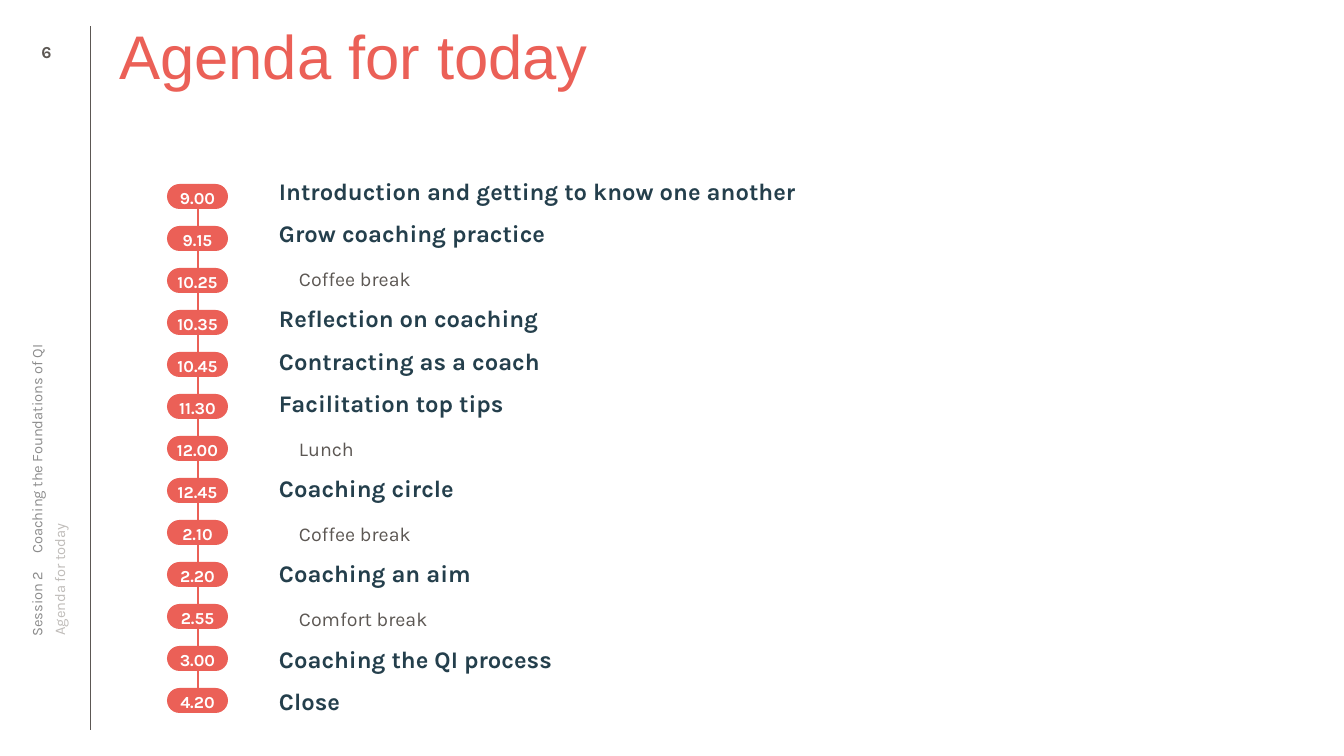
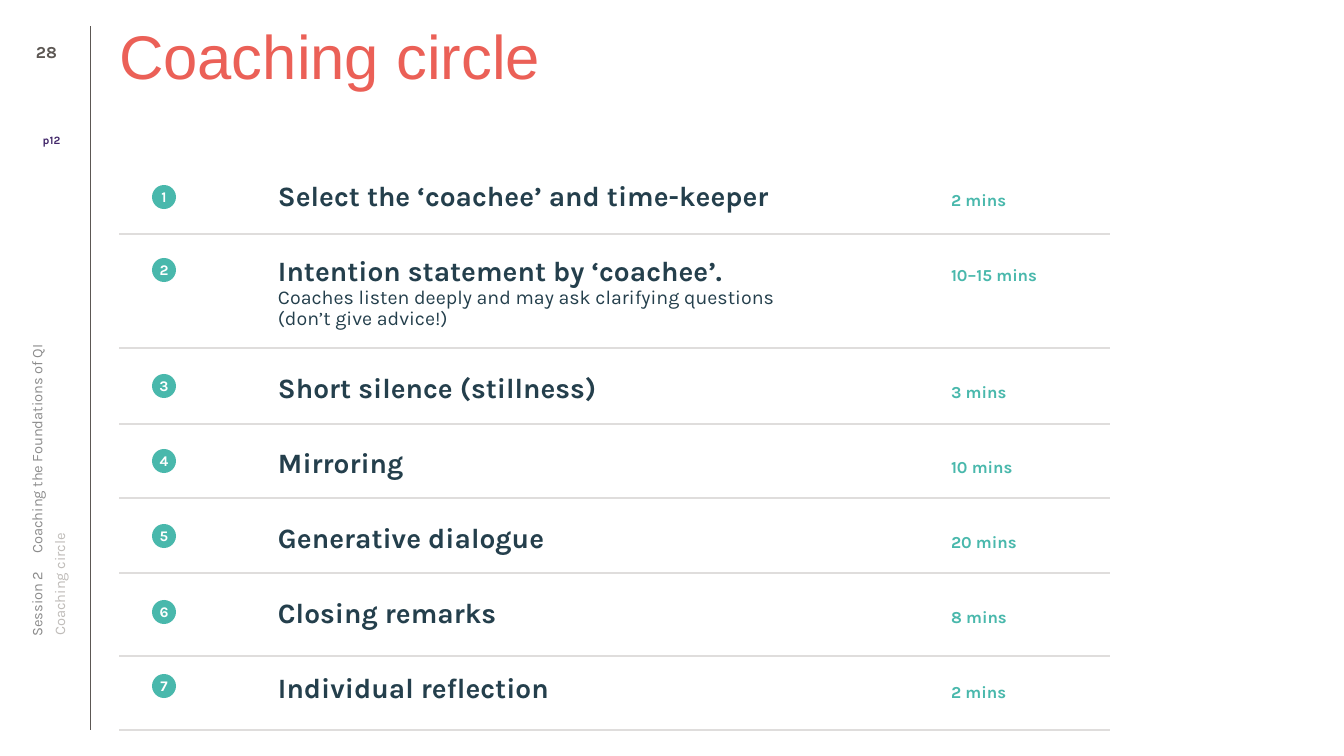
from dataclasses import dataclass

from lxml import etree
from pptx import Presentation
from pptx.dml.color import RGBColor
from pptx.enum.shapes import MSO_CONNECTOR, MSO_SHAPE
from pptx.enum.text import MSO_ANCHOR, MSO_AUTO_SIZE, PP_ALIGN
from pptx.oxml.ns import qn
from pptx.util import Emu, Pt

STRAIGHT = MSO_CONNECTOR.STRAIGHT
PILL, CIRCLE = MSO_SHAPE.ROUNDED_RECTANGLE, MSO_SHAPE.OVAL
TOP, MIDDLE = MSO_ANCHOR.TOP, MSO_ANCHOR.MIDDLE
LEFT, CENTER = PP_ALIGN.LEFT, PP_ALIGN.CENTER
NO_AUTOFIT = MSO_AUTO_SIZE.NONE

WIDTH, HEIGHT = 1344, 756
EMU_PER_PX = 12192000 / WIDTH


def px(length):
    return Emu(round(length * EMU_PER_PX))


@dataclass(frozen=True)
class TextStyle:
    size: float
    color: str
    bold: bool = False
    font: str = "Karla"


@dataclass(frozen=True)
class Theme:
    coral: str = "EB6057"
    teal: str = "49B8AC"
    margin_line: str = "5C5753"
    divider: str = "DFDDDC"
    title: TextStyle = TextStyle(44, "EB6057", font="Arial")
    page_number: TextStyle = TextStyle(12, "5C5753", True)
    page_reference: TextStyle = TextStyle(8, "412669", True)
    session: TextStyle = TextStyle(10.5, "8C8C8C")
    section: TextStyle = TextStyle(10.5, "BFBCB9")
    pill: TextStyle = TextStyle(12, "FFFFFF", True)
    step_number: TextStyle = TextStyle(10.5, "FFFFFF", True)
    agenda_item: TextStyle = TextStyle(17, "243F4C", True)
    agenda_break: TextStyle = TextStyle(14, "5C5753")
    step: TextStyle = TextStyle(20, "243F4C", True)
    step_detail: TextStyle = TextStyle(14, "243F4C")
    duration: TextStyle = TextStyle(12, "49B8AC", True)


@dataclass(frozen=True)
class ListItem:
    text: str
    style: TextStyle
    before: int = 0
    after: int = 0
    indent: int = 0


class Deck:
    """Holds the theme, the presentation and the current slide."""

    def __init__(self, theme):
        self.theme = theme
        self.presentation = Presentation()
        self.presentation.slide_width = px(WIDTH)
        self.presentation.slide_height = px(HEIGHT)
        self.slide = None

    def new_slide(self, title, number):
        layout = self.presentation.slide_layouts[1]
        self.slide = self.presentation.slides.add_slide(layout)
        theme = self.theme
        # Margin line and title
        self.line((90, 730), (90, 26), theme.margin_line, 0.25)
        heading = self.slide.shapes.title
        self.place(heading, (119, 26, 1199, 126))
        frame = self.frame(heading, TOP)
        self.add_text(frame.paragraphs[0], title, theme.title, spacing=0.9)
        # Page number and rotated labels in the margin
        self.text_box((26, 26, 41, 51), str(number), theme.page_number, CENTER)
        self.text_box((-198, 392, 469, 20),
                      "Session 2\tCoaching the Foundations of QI",
                      theme.session, rotation=270, tab=83)
        self.text_box((-174, 394, 468, 15), title, theme.section, anchor=TOP,
                      rotation=270, spacing=0.9)

    def place(self, shape, box):
        shape.left, shape.top, shape.width, shape.height = map(px, box)

    def frame(self, shape, anchor):
        frame = shape.text_frame
        frame.word_wrap = True
        frame.auto_size = NO_AUTOFIT
        frame.vertical_anchor = anchor
        frame.margin_left = frame.margin_right = 0
        frame.margin_top = frame.margin_bottom = 0
        return frame

    def add_text(self, paragraph, text, style, align=LEFT, spacing=1.0):
        paragraph.alignment = align
        paragraph.line_spacing = spacing
        run = paragraph.add_run()
        run.text = text
        font = run.font
        font.name, font.size, font.bold = style.font, Pt(style.size), style.bold
        font.color.rgb = RGBColor.from_string(style.color)

    def text_box(self, box, text, style, align=LEFT, anchor=MIDDLE, rotation=0,
                 spacing=1.0, tab=None):
        shape = self.slide.shapes.add_textbox(*map(px, box))
        shape.rotation = rotation
        paragraph = self.frame(shape, anchor).paragraphs[0]
        if tab:
            properties = paragraph._p.get_or_add_pPr()
            stops = etree.SubElement(properties, qn("a:tabLst"))
            etree.SubElement(stops, qn("a:tab"), pos=str(px(tab)), algn="l")
        self.add_text(paragraph, text, style, align, spacing)

    def line(self, start, end, color, width):
        connector = self.slide.shapes.add_connector(
            STRAIGHT, *map(px, start + end))
        connector.line.color.rgb = RGBColor.from_string(color)
        connector.line.width = Pt(width)
        etree.SubElement(connector._element.spPr, qn("a:effectLst"))

    def badge(self, kind, box, text, color, style, anchor):
        shape = self.slide.shapes.add_shape(kind, *map(px, box))
        if kind == PILL:
            shape.adjustments[0] = 0.5
        shape.shadow.inherit = False
        shape.fill.solid()
        shape.fill.fore_color.rgb = RGBColor.from_string(color)
        shape.line.fill.background()
        frame = self.frame(shape, anchor)
        self.add_text(frame.paragraphs[0], text, style, CENTER)

    def body_list(self, box, items, spacing):
        body = self.slide.placeholders[1]
        self.place(body, box)
        frame = self.frame(body, TOP)
        for index, item in enumerate(items):
            paragraph = frame.add_paragraph() if index else frame.paragraphs[0]
            properties = paragraph._p.get_or_add_pPr()
            properties.set("marL", str(px(item.indent)))
            properties.set("indent", "0")
            etree.SubElement(properties, qn("a:buNone"))
            paragraph.space_before = Pt(item.before if index else 0)
            paragraph.space_after = Pt(item.after)
            self.add_text(paragraph, item.text, item.style, spacing=spacing)


def agenda_slide(deck):
    theme = deck.theme
    deck.new_slide("Agenda for today", 6)
    # Time, entry, whether it is a break
    agenda = [
        ("9.00", "Introduction and getting to know one another", False),
        ("9.15", "Grow coaching practice", False),
        ("10.25", "Coffee break", True),
        ("10.35", "Reflection on coaching", False),
        ("10.45", "Contracting as a coach", False),
        ("11.30", "Facilitation top tips", False),
        ("12.00", "Lunch", True),
        ("12.45", "Coaching circle", False),
        ("2.10", "Coffee break", True),
        ("2.20", "Coaching an aim", False),
        ("2.55", "Comfort break", True),
        ("3.00", "Coaching the QI process", False),
        ("4.20", "Close", False),
    ]
    # Timeline
    top, pitch = 184, 42
    deck.line((198, top), (198, 712), theme.coral, 1.5)
    for row, (time, _, _) in enumerate(agenda):
        deck.badge(PILL, (167, top + row * pitch, 61, 25), time,
                   theme.coral, theme.pill, TOP)
    # Entries
    items = [
        ListItem(entry, theme.agenda_break, 15, 2, 21) if is_break
        else ListItem(entry, theme.agenda_item, 12, 2, 1)
        for _, entry, is_break in agenda
    ]
    deck.body_list((278, 182, 1039, 539), items, 0.8)


def coaching_circle_slide(deck):
    theme = deck.theme
    deck.new_slide("Coaching circle", 28)
    deck.text_box((26, 128, 51, 24), "p12", theme.page_reference, CENTER)
    # Step, detail, duration, then tops of circle, duration and divider
    steps = [
        ("Select the ‘coachee’ and time-keeper", "", "2 mins", 185, 190, 234),
        ("Intention statement by ‘coachee’.",
         "Coaches listen deeply and may ask clarifying questions "
         "(don’t give advice!)", "10–15 mins", 258, 265, 348),
        ("Short silence (stillness)", "", "3 mins", 374, 382, 424),
        ("Mirroring", "", "10 mins", 449, 457, 498),
        ("Generative dialogue", "", "20 mins", 524, 532, 573),
        ("Closing remarks", "", "8 mins", 600, 607, 656),
        ("Individual reflection", "", "2 mins", 674, 682, 730),
    ]
    gap = 32
    items = []
    for number, (step, detail, duration, circle_top, duration_top,
                 divider_top) in enumerate(steps, 1):
        deck.line((1110, divider_top), (119, divider_top), theme.divider, 1)
        deck.badge(CIRCLE, (152, circle_top, 24, 24), str(number),
                   theme.teal, theme.step_number, MIDDLE)
        deck.text_box((951, duration_top, 208, 20), duration, theme.duration)
        items.append(ListItem(step, theme.step, after=0 if detail else gap))
        if detail:
            items.append(ListItem(detail, theme.step_detail, after=gap))
    deck.body_list((278, 182, 538, 539), items, 0.9)


def main():
    deck = Deck(Theme())
    agenda_slide(deck)
    coaching_circle_slide(deck)
    deck.presentation.save("out.pptx")


if __name__ == "__main__":
    main()
